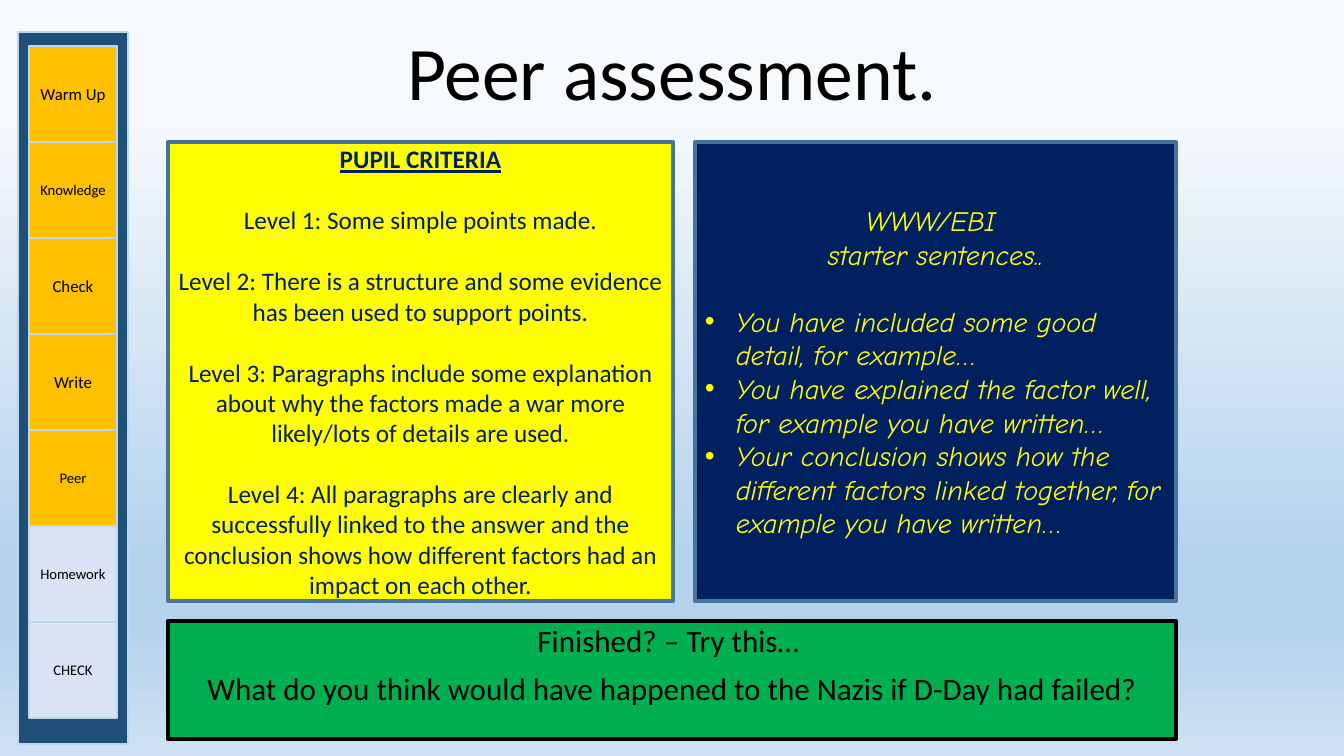
from copy import deepcopy
from lxml.etree import SubElement
from pptx import Presentation
from pptx.dml.color import RGBColor
from pptx.enum.shapes import MSO_SHAPE
from pptx.enum.text import MSO_ANCHOR, PP_ALIGN
from pptx.oxml.ns import qn
from pptx.util import Emu, Pt

SCALE = 914400 / 100.8
STOPS = [(14, "F7FAFD"), (74, "B5D2EC"), (83, "B5D2EC"), (100, "CEE1F2")]
TABS = [("Warm Up", 12), ("Knowledge", 10.5), ("Check", 12), ("Write", 12),
        ("Peer", 10.5), ("Homework", 10.5), ("CHECK", 10.5)]
DONE = 5
LEVELS = [
    "Level 1: Some simple points made.",
    "Level 2: There is a structure and some evidence has been used to support points.",
    "Level 3: Paragraphs include some explanation about why the factors made a war more "
    "likely/lots of details are used.",
    "Level 4: All paragraphs are clearly and successfully linked to the answer and the "
    "conclusion shows how different factors had an impact on each other.",
]
HEADS = ["WWW/EBI ", "starter sentences.."]
STARTS = [
    "You have included some good detail, for example…",
    "You have explained the factor well, for example you have written…",
    "Your conclusion shows how the different factors linked together, "
    "for example you have written…",
]
TASK = ["Finished? – Try this… ",
        "What do you think would have happened to the Nazis if D-Day had failed?"]


def px(count):
    return Emu(round(count * SCALE))


def color(code):
    return RGBColor.from_string(code)


def add_box(page, box, fill, line, width, anchor=MSO_ANCHOR.MIDDLE):
    shape = page.shapes.add_shape(MSO_SHAPE.RECTANGLE, *map(px, box))
    shape.shadow.inherit = False
    shape.fill.solid()
    shape.fill.fore_color.rgb = color(fill)
    shape.line.color.rgb = color(line)
    shape.line.width = Pt(width)
    shape.text_frame.word_wrap = True
    shape.text_frame.vertical_anchor = anchor
    return shape.text_frame


def add_line(frame, text, size, ink="000000", face="Calibri", gap=0, align=PP_ALIGN.CENTER):
    first = frame.paragraphs[0]
    para = frame.add_paragraph() if first.runs else first
    para.alignment = align
    para.space_before = Pt(gap)
    run = para.add_run()
    run.text = text
    run.font.size = Pt(size)
    run.font.name = face
    run.font.color.rgb = color(ink)
    return para


def add_bullet(para, indent):
    props = para._p.get_or_add_pPr()
    props.set("marL", str(px(indent)))
    props.set("indent", str(-px(indent)))
    SubElement(props, qn("a:buFont")).set("typeface", "Arial")
    SubElement(props, qn("a:buChar")).set("char", "•")


def paint_back(page):
    fill = page.background.fill
    fill.gradient()
    fill.gradient_angle = 270
    stops = page.element.xpath(".//a:gsLst")[0]
    while len(stops) < len(STOPS):
        stops.append(deepcopy(stops[0]))
    for stop, (place, code) in zip(fill.gradient_stops, STOPS):
        stop.position = place / 100
        stop.color.rgb = color(code)


def draw_rail(page, box):
    left, top, width, height = box
    add_box(page, box, "1F4E79", "BDD7EE", 1)
    step = 96
    for index, (name, size) in enumerate(TABS):
        fill = "FFC000" if index < DONE else "DAE3F3"
        tab = (left + 11, top + 14 + index * step, width - 22, step)
        add_line(add_box(page, tab, fill, "BDD7EE", 1), name, size)


def draw_title(page, box):
    frame = page.shapes.add_textbox(*map(px, box)).text_frame
    frame.word_wrap = True
    frame.vertical_anchor = MSO_ANCHOR.BOTTOM
    add_line(frame, "Peer assessment.", 54).line_spacing = 0.9


def draw_levels(page, box):
    frame = add_box(page, box, "FFFF00", "43739E", 3)
    font = add_line(frame, "PUPIL CRITERIA", 18, "002060").runs[0].font
    font.bold = font.underline = True
    for text in LEVELS:
        add_line(frame, text, 18, "002060", gap=22)


def draw_starts(page, box):
    frame = add_box(page, box, "002060", "43739E", 3)
    face = "Comic Neue"
    for text in HEADS:
        add_line(frame, text, 20, "FFFF00", face)
    for index, text in enumerate(STARTS):
        gap = 0 if index else 24
        add_bullet(add_line(frame, text, 20, "FFFF00", face, gap, PP_ALIGN.LEFT), 31)
    for para in frame.paragraphs:
        para.runs[0].font.italic = True


def draw_task(page, box):
    frame = add_box(page, box, "00B050", "000000", 3, MSO_ANCHOR.TOP)
    for text in TASK:
        add_line(frame, text, 22.2, gap=10).line_spacing = 0.9


def main():
    deck = Presentation()
    deck.slide_width, deck.slide_height = px(1344), px(756)
    page = deck.slides.add_slide(deck.slide_layouts[6])
    paint_back(page)
    draw_rail(page, (18, 32, 110, 712))
    draw_title(page, (168, 52, 1008, 70))
    draw_task(page, (168, 621, 1008, 118))
    draw_starts(page, (695, 142, 481, 459))
    draw_levels(page, (168, 142, 505, 459))
    deck.save("out.pptx")


if __name__ == "__main__":
    main()
